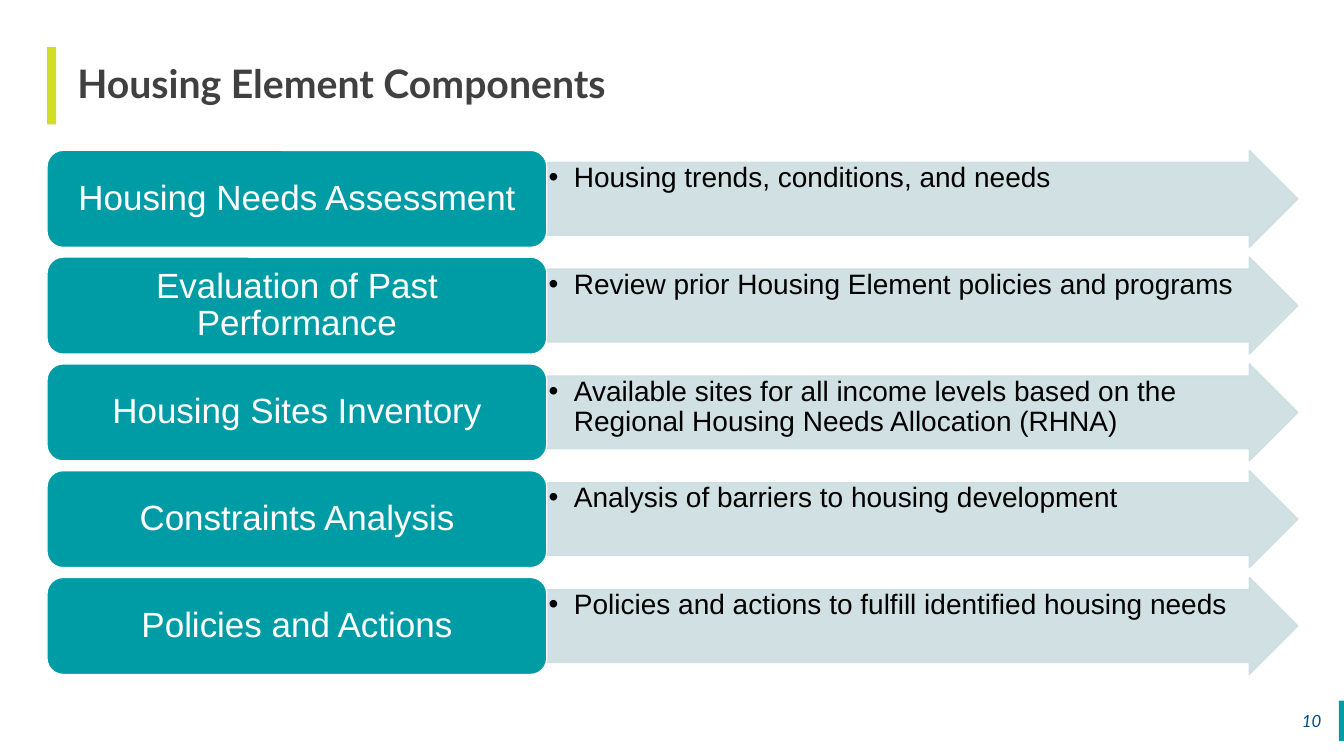
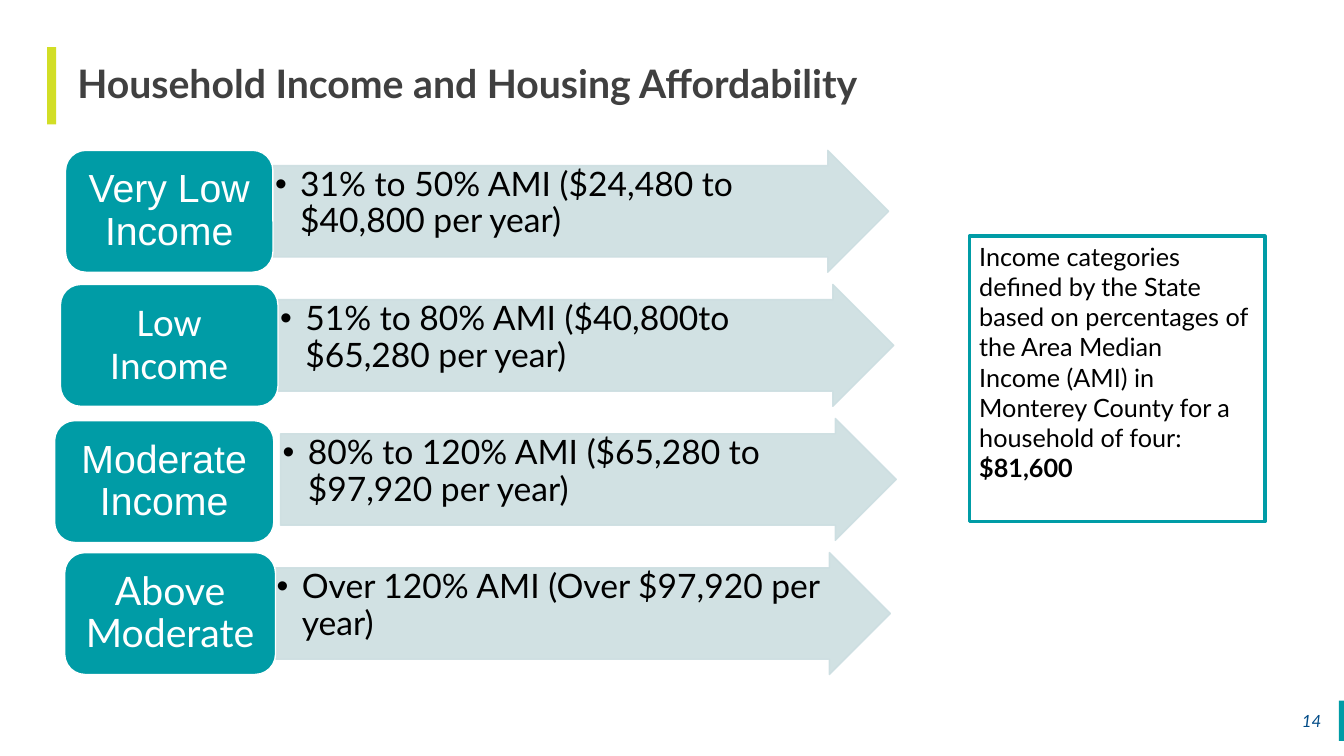
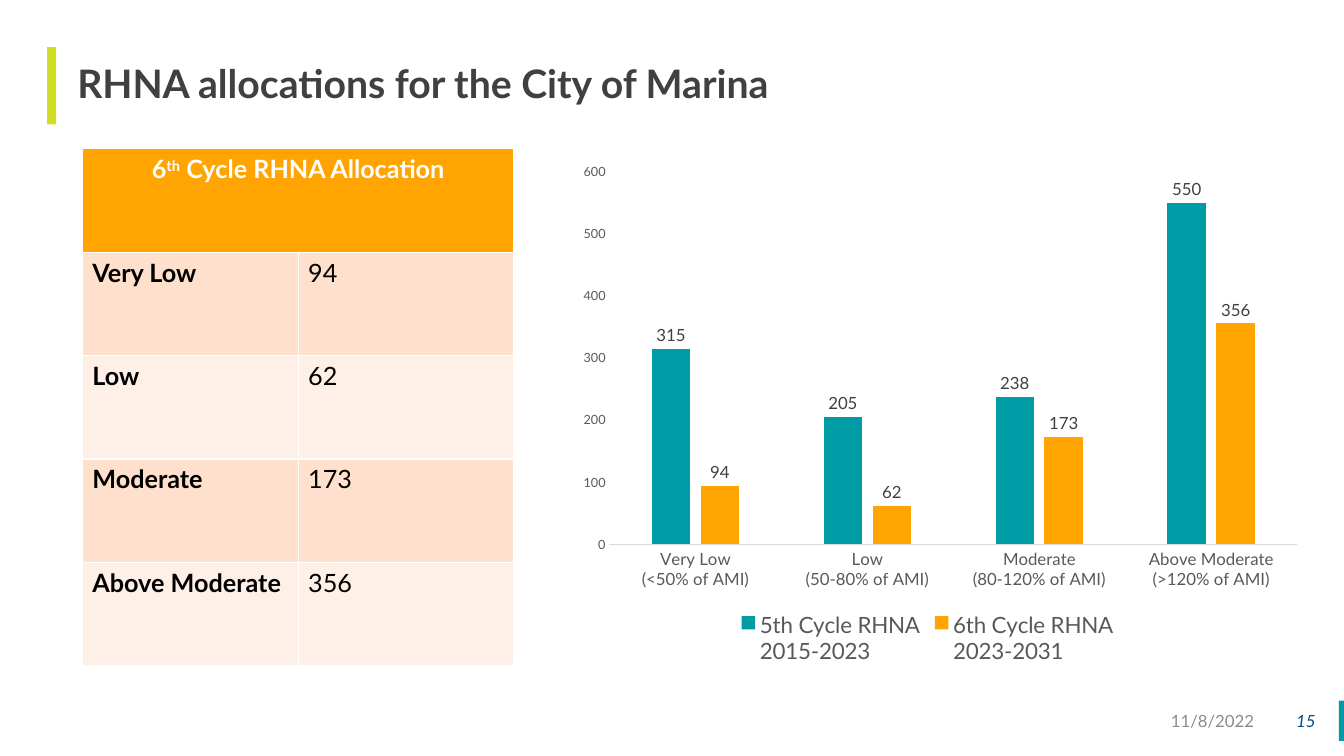
from dataclasses import dataclass
from typing import NamedTuple

from lxml import etree
from pptx import Presentation
from pptx import util as u
from pptx.chart.data import CategoryChartData
from pptx.dml.color import RGBColor
from pptx.enum import chart as charts, shapes, text
from pptx.oxml import ns

# The slide is a grid of square cells, 160 columns by 90 rows.
COLUMNS, ROWS = 160, 90
WIDTH, HEIGHT = u.Inches(13.333), u.Inches(7.5)

TEAL, LIME, ORANGE, PALE = "009CA6", "D2DE26", "FFA400", "CCDEE1"
WHITE, BLACK, DARK, GREY, NAVY = "FFFFFF", "000000", "404040", "595959", "004B87"
BANDS = ("FFE0CC", "FFF0E7")
FONT = "Lato"
LEFT, CENTER, RIGHT = text.PP_ALIGN.LEFT, text.PP_ALIGN.CENTER, text.PP_ALIGN.RIGHT
TOP, MIDDLE = text.MSO_ANCHOR.TOP, text.MSO_ANCHOR.MIDDLE


class Area(NamedTuple):
    """A rectangle in grid columns and rows."""
    left: float
    top: float
    width: float
    height: float

    def emu(self) -> list[int]:
        cells = (WIDTH / COLUMNS, HEIGHT / ROWS) * 2
        return [round(value * cell) for value, cell in zip(self, cells)]


@dataclass
class Step:
    label: str
    detail: str
    box_left: float = 5.6
    box_width: float = 59.5
    arrow_left: float = 65.2
    box_drop: float = 0
    label_font: str = FONT


@dataclass
class StepStyle:
    arrow_width: float
    label_size: float
    detail_size: float
    detail_font: str
    label_inset: tuple[float, float]
    detail_inset: float


STEPS_AREA = Area(5.6, 17.9, 148.9, 62.4)
COMPONENT_STYLE = StepStyle(89.3, 25, 20, "Arial", (0.1, 0.05), 0.01)
INCOME_STYLE = StepStyle(73.3, 28, 24, FONT, (0.12, 0.06), 0.02)

COMPONENTS = [
    Step(label, detail, label_font="Arial") for label, detail in (
        ("Housing Needs Assessment", "Housing trends, conditions, and needs"),
        ("Evaluation of Past Performance",
         "Review prior Housing Element policies and programs"),
        ("Housing Sites Inventory",
         "Available sites for all income levels based on the "
         "Regional Housing Needs Allocation (RHNA)"),
        ("Constraints Analysis", "Analysis of barriers to housing development"),
        ("Policies and Actions",
         "Policies and actions to fulfill identified housing needs"),
    )
]
INCOMES = [
    Step("Very Low Income", "31% to 50% AMI ($24,480 to $40,800 per year)",
         7.8, 24.7, 32.5, label_font="Arial"),
    Step("Low Income", "51% to 80% AMI ($40,800to $65,280 per year)",
         7.2, 25.9, 33.1, label_font="Calibri"),
    Step("Moderate Income", "80% to 120% AMI ($65,280 to $97,920 per year)",
         6.5, 26.1, 33.4, box_drop=0.25, label_font="Arial"),
    Step("Above Moderate", "Over 120% AMI (Over $97,920 per year)",
         7.7, 25.1, 32.7),
]
NOTE = ("Income categories\ndefined by the State based on percentages of the "
        "Area Median\nIncome (AMI) in\nMonterey County for a household of four: ")
ALLOCATION = {"Very Low": 94, "Low": 62, "Moderate": 173, "Above Moderate": 356}
SHARES = ("<50%", "50-80%", "80-120%", ">120%")
FIFTH_CYCLE = (315, 205, 238, 550)


def rgb(color: str) -> RGBColor:
    return RGBColor.from_string(color)


def format_font(font, size: float, color: str, name: str = FONT,
                bold: bool = False, italic: bool = False) -> None:
    font.size, font.name = u.Pt(size), name
    font.bold, font.italic = bold, italic
    font.color.rgb = rgb(color)


def add_span(para, words: str, raised: bool = False, **style) -> None:
    """Add text to a paragraph, with a line break at each newline."""
    for index, line in enumerate(words.split("\n")):
        if index:
            para.add_line_break()
        span = para.add_run()
        span.text = line
        format_font(span.font, **style)
        if raised:
            span.font._element.set("baseline", "30000")


def write(frame, words: str, align=LEFT, anchor=TOP, spacing: float = 1.0,
          inset: tuple[float, ...] | None = None, bullet: bool = False, **style):
    """Fill the first paragraph; inset is left, top, right, bottom in inches."""
    frame.word_wrap = True
    frame.auto_size = text.MSO_AUTO_SIZE.NONE
    frame.vertical_anchor = anchor
    if inset:
        (frame.margin_left, frame.margin_top,
         frame.margin_right, frame.margin_bottom) = map(u.Inches, inset)
    para = frame.paragraphs[0]
    para.alignment, para.line_spacing = align, spacing
    if bullet:
        props = para._p.get_or_add_pPr()
        props.set("marL", str(u.Inches(0.25)))
        props.set("indent", str(-u.Inches(0.25)))
        etree.SubElement(props, ns.qn("a:buFont")).set("typeface", "Arial")
        etree.SubElement(props, ns.qn("a:buChar")).set("char", "•")
    add_span(para, words, **style)
    return para


def add_box(page, kind, area: Area, fill: str | None = None,
            line: str | None = None, line_width: float = 1):
    box = page.shapes.add_shape(kind, *area.emu())
    box.shadow.inherit = False
    if fill:
        box.fill.solid()
        box.fill.fore_color.rgb = rgb(fill)
    else:
        box.fill.background()
    if line:
        box.line.color.rgb = rgb(line)
        box.line.width = u.Pt(line_width)
    else:
        box.line.fill.background()
    return box


def add_label(page, area: Area, words: str, **style) -> None:
    box = page.shapes.add_textbox(*area.emu())
    write(box.text_frame, words, anchor=MIDDLE, align=RIGHT, size=12, **style)


def add_page(deck, title: str, number: int, number_left: float = 153.6,
             number_width: float = 4.9):
    page = deck.slides.add_slide(deck.slide_layouts.get_by_name("Title Only"))
    rectangle = shapes.MSO_SHAPE.RECTANGLE
    add_box(page, rectangle, Area(159.4, 83.4, 0.6, 4.8), TEAL)
    add_box(page, rectangle, Area(5.6, 5.6, 1.1, 9.2), LIME)
    heading = page.shapes.title
    heading.left, heading.top, heading.width, heading.height = Area(
        6.8, 5.6, 147.7, 9.2).emu()
    write(heading.text_frame, title, anchor=MIDDLE, spacing=0.9,
          inset=(0.2, 0, 0, 0), size=28, color=DARK, bold=True)
    add_label(page, Area(number_left, 83.4, number_width, 4.8), str(number),
              color=NAVY, italic=True)
    return page


def make_translucent(shape, percent: int) -> None:
    for color in shape._element.spPr.iter(ns.qn("a:srgbClr")):
        etree.SubElement(color, ns.qn("a:alpha")).set("val", str(percent * 1000))


def add_steps(page, steps: list[Step], style: StepStyle) -> None:
    """Stack label boxes with arrows; gaps are a tenth of a row's height."""
    count = len(steps)
    height = STEPS_AREA.height / (count + (count - 1) / 10)
    for index, step in enumerate(steps):
        top = STEPS_AREA.top + index * height * 1.1
        arrow = add_box(page, shapes.MSO_SHAPE.RIGHT_ARROW,
                        Area(step.arrow_left, top, style.arrow_width, height),
                        PALE, PALE)
        arrow.adjustments[0], arrow.adjustments[1] = 0.75, 0.5
        make_translucent(arrow, 90)
        write(arrow.text_frame, step.detail, spacing=0.9, bullet=True,
              inset=(style.detail_inset,) * 4, size=style.detail_size,
              color=BLACK, name=style.detail_font)
        box = add_box(page, shapes.MSO_SHAPE.ROUNDED_RECTANGLE,
                      Area(step.box_left, top + step.box_drop,
                           step.box_width, height), TEAL, WHITE)
        write(box.text_frame, step.label, align=CENTER, anchor=MIDDLE,
              spacing=0.9, inset=style.label_inset * 2, size=style.label_size,
              color=WHITE, name=step.label_font)


def add_allocation_table(page, area: Area) -> None:
    table = page.shapes.add_table(len(ALLOCATION) + 1, 2, *area.emu()).table
    header = table.cell(0, 0)
    header.merge(table.cell(0, 1))
    style = dict(size=18, color=WHITE, bold=True)
    para = header.text_frame.paragraphs[0]
    para.alignment = CENTER
    add_span(para, "6", **style)
    add_span(para, "th", raised=True, **style)
    add_span(para, " Cycle RHNA Allocation", **style)
    header.fill.solid()
    header.fill.fore_color.rgb = rgb(ORANGE)
    for row, entry in enumerate(ALLOCATION.items(), start=1):
        for column, value in enumerate(entry):
            cell = table.cell(row, column)
            cell.fill.solid()
            cell.fill.fore_color.rgb = rgb(BANDS[(row - 1) % 2])
            add_span(cell.text_frame.paragraphs[0], str(value), size=18,
                     color=BLACK, bold=column == 0)


def place_plot(chart, **shares: float) -> None:
    """Fix the inner plot area as shares of the chart."""
    plot_area = chart._chartSpace.chart.plotArea
    for old in plot_area.findall(ns.qn("c:layout")):
        plot_area.remove(old)
    layout = etree.Element(ns.qn("c:layout"))
    plot_area.insert(0, layout)
    manual = etree.SubElement(layout, ns.qn("c:manualLayout"))
    settings = dict(layoutTarget="inner", xMode="edge", yMode="edge", **shares)
    for tag, value in settings.items():
        etree.SubElement(manual, ns.qn(f"c:{tag}")).set("val", str(value))


def add_cycle_chart(page, area: Area) -> None:
    data = CategoryChartData()
    data.categories = [f"{level}\n({share} of AMI)"
                       for level, share in zip(ALLOCATION, SHARES)]
    data.add_series("5th Cycle RHNA\n2015-2023", FIFTH_CYCLE)
    data.add_series("6th Cycle RHNA\n2023-2031", ALLOCATION.values())
    chart = page.shapes.add_chart(charts.XL_CHART_TYPE.COLUMN_CLUSTERED,
                                  *area.emu(), data).chart
    format_font(chart.font, 10, BLACK)
    chart.has_title = False
    chart.has_legend = True
    chart.legend.position = charts.XL_LEGEND_POSITION.BOTTOM
    chart.legend.include_in_layout = False
    format_font(chart.legend.font, 16, GREY)

    for axis, size in ((chart.category_axis, 12), (chart.value_axis, 9)):
        axis.has_major_gridlines = False
        axis.major_tick_mark = axis.minor_tick_mark = charts.XL_TICK_MARK.NONE
        format_font(axis.tick_labels.font, size, GREY)
    chart.category_axis.format.line.color.rgb = rgb("D9D9D9")
    chart.category_axis.format.line.width = u.Pt(0.75)
    chart.value_axis.format.line.fill.background()
    chart.value_axis.minimum_scale, chart.value_axis.maximum_scale = 0, 600
    chart.value_axis.major_unit = 100

    plot = chart.plots[0]
    plot.vary_by_categories = False
    plot.gap_width, plot.overlap = 219, -27
    for series, color in zip(plot.series, (TEAL, ORANGE)):
        series.format.fill.solid()
        series.format.fill.fore_color.rgb = rgb(color)
        labels = series.data_labels
        labels.show_value = True
        labels.position = charts.XL_LABEL_POSITION.OUTSIDE_END
        format_font(labels.font, 12, DARK)
    place_plot(chart, x=0.07, y=0.04, w=0.93, h=0.72)


def main() -> None:
    deck = Presentation()
    deck.slide_width, deck.slide_height = WIDTH, HEIGHT

    page = add_page(deck, "Housing Element Components", 10)
    add_steps(page, COMPONENTS, COMPONENT_STYLE)

    page = add_page(deck, "Household Income and Housing Affordability", 14)
    note = add_box(page, shapes.MSO_SHAPE.RECTANGLE,
                   Area(115.4, 28.1, 35.2, 34), line=TEAL, line_width=2.25)
    para = write(note.text_frame, NOTE, size=18, color=BLACK)
    add_span(para, "$81,600", size=18, color=BLACK, bold=True)
    add_steps(page, INCOMES, INCOME_STYLE)

    page = add_page(deck, "RHNA allocations for the City of Marina", 15,
                    number_left=150.5, number_width=7.3)
    add_label(page, Area(114.5, 83.4, 36, 4.8), "11/8/2022", color="8C8C8C")
    add_cycle_chart(page, Area(66.4, 18, 88.1, 61.6))
    add_allocation_table(page, Area(9.8, 17.7, 51.4, 61.6))

    deck.save("out.pptx")


if __name__ == "__main__":
    main()
